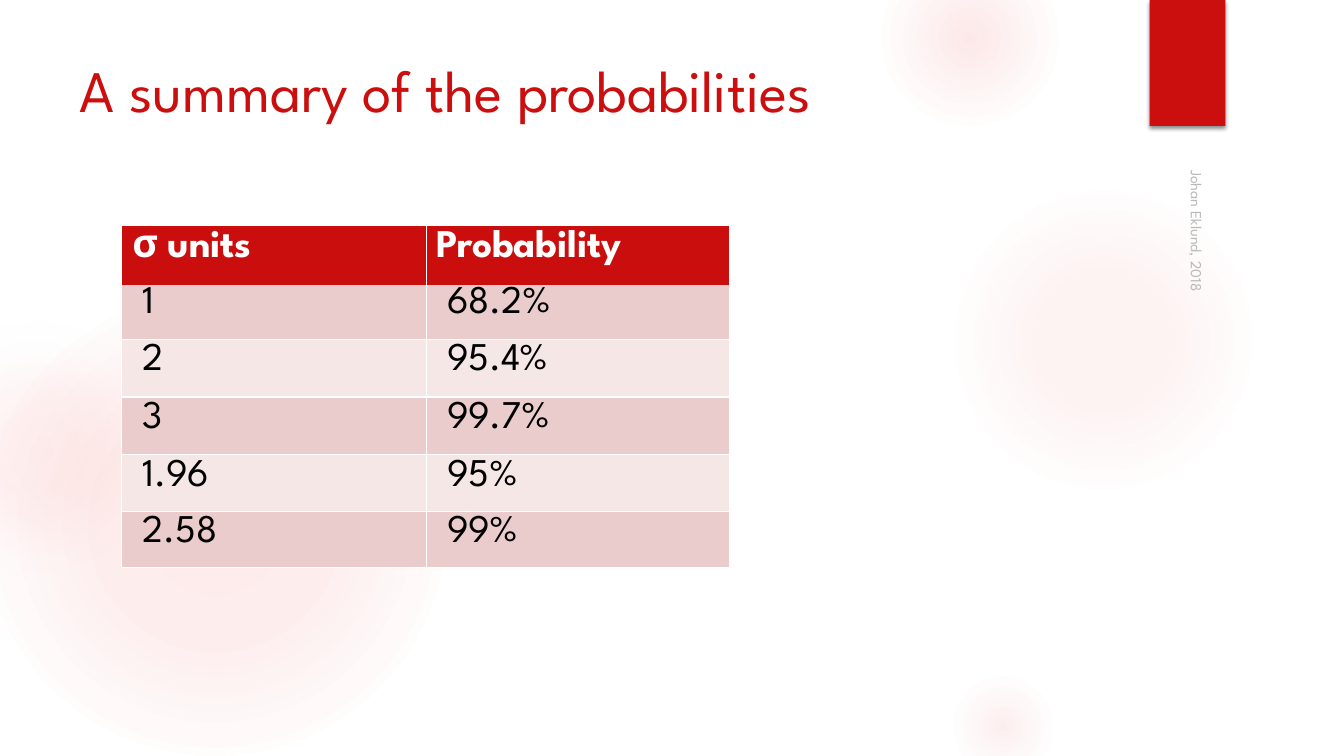
"""Build the slide that sums up normal-distribution probabilities."""
from dataclasses import dataclass

from lxml import etree
from pptx import Presentation
from pptx import util as u
from pptx.dml.color import RGBColor
from pptx.enum import shapes, text
from pptx.oxml import parse_xml
from pptx.oxml.ns import nsdecls, qn

PX = 9525


@dataclass(frozen=True)
class Theme:
    font: str = "League Spartan"
    white: str = "FFFFFF"
    black: str = "000000"
    red: str = "CB0F0F"
    header: str = "CA0E0E"
    bands: tuple[str, str] = ("EBCCCC", "F6E7E7")
    glow: str = "F35C5C"
    glow_edge: str = "F3F3F3"
    grey: str = "8C8C8C"
    title_size: float = 42
    table_size: float = 28
    credit_size: float = 11


@dataclass(frozen=True)
class Box:
    left: int
    top: int
    width: int
    height: int

    def emu(self) -> tuple[int, ...]:
        return tuple(px(n) for n in (self.left, self.top, self.width, self.height))


@dataclass(frozen=True)
class Glow:
    left: int
    top: int
    size: int
    stops: tuple[tuple[int, int], ...]
    edge: str


@dataclass(frozen=True)
class Style:
    size: float
    colour: str
    bold: bool = False


THEME = Theme()
GLOWS = (
    Glow(-16, 280, 440, ((0, 11), (36, 10), (75, 0)), THEME.glow),
    Glow(-88, 304, 248, ((0, 8), (36, 5), (71, 0)), THEME.glow_edge),
    Glow(903, 176, 296, ((0, 7), (36, 6), (69, 0)), THEME.glow),
    Glow(840, -48, 168, ((0, 14), (36, 7), (73, 0)), THEME.glow),
    Glow(903, 640, 104, ((0, 10), (31, 5), (66, 0)), THEME.glow),
)
TAG = Box(1095, 0, 72, 120)
TITLE = Box(76, 50, 824, 70)
TABLE = Box(116, 215, 579, 326)
CREDIT = Box(940, 339, 405, 32)
COLUMNS = (290, 289)
ROW_HEIGHTS = (56, 52, 55, 55, 54, 54)
ROWS = (
    ("σ units", "Probability"),
    ("1", "68.2%"),
    ("2", "95.4%"),
    ("3", "99.7%"),
    ("1.96", "95%"),
    ("2.58", "99%"),
)
ROW_RULES = (0.75, 0, 1, 1.5, 1, 1, 0.75)
COLUMN_RULES = (0.75, 1, 0.75)


def px(length: int) -> int:
    return u.Emu(length * PX)


def add_span(para, words: str, style: Style, tracked: bool = False):
    span = para.add_run()
    span.text = words
    span.font.name = THEME.font
    span.font.size = u.Pt(style.size)
    span.font.bold = style.bold
    span.font.color.rgb = RGBColor.from_string(style.colour)
    if tracked:
        span.font._element.set("spc", "-10")
    return span


def add_block(page, kind, box: Box, colour: str):
    block = page.shapes.add_shape(kind, *box.emu())
    block.shadow.inherit = False
    block.fill.solid()
    block.fill.fore_color.rgb = RGBColor.from_string(colour)
    block.line.fill.background()
    return block


def add_glow(page, glow: Glow) -> None:
    box = Box(glow.left, glow.top, glow.size, glow.size)
    disc = add_block(page, shapes.MSO_SHAPE.OVAL, box, THEME.glow)
    colours = (THEME.glow, THEME.glow, glow.edge)
    stops = "".join(
        f'<a:gs pos="{place * 1000}"><a:srgbClr val="{colour}">'
        f'<a:alpha val="{alpha * 1000}"/></a:srgbClr></a:gs>'
        for (place, alpha), colour in zip(glow.stops, colours)
    )
    gradient = parse_xml(
        f'<a:gradFill {nsdecls("a")} rotWithShape="1"><a:gsLst>{stops}</a:gsLst>'
        '<a:path path="circle"><a:fillToRect l="50000" t="50000" r="50000" b="50000"/>'
        "</a:path></a:gradFill>"
    )
    props = disc._element.spPr
    props.replace(props.find(qn("a:solidFill")), gradient)


def add_tag(page) -> None:
    tag = add_block(page, shapes.MSO_SHAPE.RECTANGLE, TAG, THEME.red)
    tag._element.spPr.find(qn("a:effectLst")).append(parse_xml(
        f'<a:outerShdw {nsdecls("a")} blurRad="38100" dist="25400" dir="5400000" '
        f'rotWithShape="0"><a:srgbClr val="{THEME.black}"><a:alpha val="45000"/>'
        "</a:srgbClr></a:outerShdw>"
    ))


def set_title(page) -> None:
    title = page.shapes.title
    title.left, title.top, title.width, title.height = TITLE.emu()
    title._element.getparent().append(title._element)
    frame = title.text_frame
    frame.auto_size = text.MSO_AUTO_SIZE.NONE
    frame.vertical_anchor = text.MSO_ANCHOR.TOP
    frame.margin_left = frame.margin_right = frame.margin_bottom = 0
    frame.margin_top = px(1)
    para = frame.paragraphs[0]
    para.alignment = text.PP_ALIGN.LEFT
    style = Style(THEME.title_size, THEME.red)
    for words, tracked in (("A ", False), ("summary ", True),
                           ("of the ", False), ("probabilities", True)):
        add_span(para, words, style, tracked)


def set_borders(cell, row: int, column: int) -> None:
    props = cell._tc.get_or_add_tcPr()
    sides = (("lnL", COLUMN_RULES[column]), ("lnR", COLUMN_RULES[column + 1]),
             ("lnT", ROW_RULES[row]), ("lnB", ROW_RULES[row + 1]))
    for place, (side, width) in enumerate(sides):
        line = etree.Element(qn(f"a:{side}"), w=str(u.Pt(width)))
        if width:
            fill = etree.SubElement(line, qn("a:solidFill"))
            etree.SubElement(fill, qn("a:srgbClr"), val=THEME.white)
        else:
            etree.SubElement(line, qn("a:noFill"))
        props.insert(place, line)


def add_probabilities(page) -> None:
    frame = page.shapes.add_table(len(ROWS), len(COLUMNS), *TABLE.emu())
    table = frame.table
    table.first_row = table.horz_banding = False
    for column, width in zip(table.columns, COLUMNS):
        column.width = px(width)
    for row, height in zip(table.rows, ROW_HEIGHTS):
        row.height = px(height)
    for r, values in enumerate(ROWS):
        style = Style(THEME.table_size, THEME.black if r else THEME.white, r == 0)
        colour = THEME.bands[(r - 1) % 2] if r else THEME.header
        for c, value in enumerate(values):
            cell = table.cell(r, c)
            cell.margin_left = px(20 if r else 10)
            cell.margin_right = cell.margin_bottom = 0
            cell.margin_top = px(2 if r == 1 else 4)
            cell.fill.solid()
            cell.fill.fore_color.rgb = RGBColor.from_string(colour)
            set_borders(cell, r, c)
            add_span(cell.text_frame.paragraphs[0], value, style, len(value) > 1)


def add_credit(page) -> None:
    box = page.shapes.add_textbox(*CREDIT.emu())
    box.rotation = 90
    frame = box.text_frame
    frame.word_wrap = True
    frame.vertical_anchor = text.MSO_ANCHOR.BOTTOM
    span = add_span(frame.paragraphs[0], "Johan Eklund, 2018",
                    Style(THEME.credit_size, THEME.grey))
    colour = span.font._element.find(f".//{qn('a:srgbClr')}")
    etree.SubElement(colour, qn("a:alpha"), val="60000")


def main() -> None:
    deck = Presentation()
    deck.slide_width, deck.slide_height = px(1280), px(720)
    page = deck.slides.add_slide(deck.slide_layouts[5])
    for glow in GLOWS:
        add_glow(page, glow)
    add_tag(page)
    set_title(page)
    add_probabilities(page)
    add_credit(page)
    deck.save("out.pptx")


if __name__ == "__main__":
    main()
